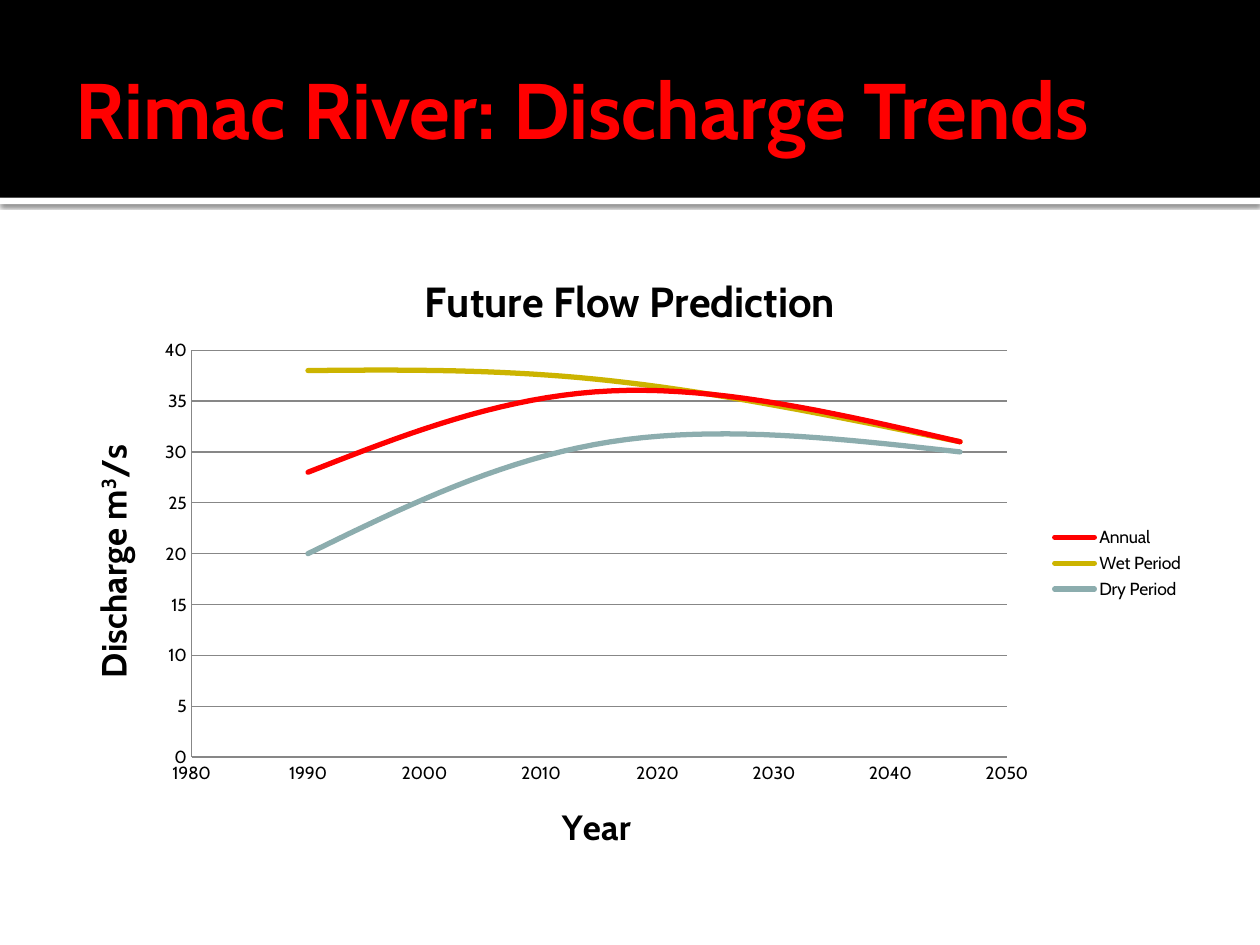
from lxml import etree
from pptx import Presentation
from pptx.chart.data import XyChartData
from pptx.dml.color import RGBColor
from pptx.enum.chart import XL_CHART_TYPE, XL_LEGEND_POSITION, XL_TICK_MARK
from pptx.enum.shapes import MSO_SHAPE
from pptx.enum.text import MSO_ANCHOR, PP_ALIGN
from pptx.oxml import parse_xml
from pptx.oxml.ns import nsdecls, qn
from pptx.util import Inches, Pt

SMOOTH = XL_CHART_TYPE.XY_SCATTER_SMOOTH_NO_MARKERS
RIGHT = XL_LEGEND_POSITION.RIGHT
NO_TICK = XL_TICK_MARK.NONE
RECT = MSO_SHAPE.RECTANGLE
MIDDLE = MSO_ANCHOR.MIDDLE
LEFT = PP_ALIGN.LEFT
FONT = "Cabin"
GRID = "878787"
YEARS = (1990, 2016, 2046)
SERIES = (
    ("Annual", (28, 36, 31), "FF0000"),
    ("Wet Period", (38, 37, 31), "CCB400"),
    ("Dry Period", (20, 31, 30), "8CADAE"),
)


def rgb(value):
    """Turn a hex string into a colour."""
    return RGBColor.from_string(value)


def add_text(p, text, size=10, color="000000", bold=False, baseline=None):
    """Add a formatted run to a paragraph."""
    r = p.add_run()
    r.text = text
    r.font.name, r.font.size, r.font.bold = FONT, Pt(size), bold
    r.font.color.rgb = rgb(color)
    if baseline:
        r.font._element.set("baseline", str(baseline))


def add_bar(s, box, color):
    """Add a plain rectangle without outline or shadow."""
    sp = s.shapes.add_shape(RECT, *map(Inches, box))
    sp.shadow.inherit = False
    sp.fill.solid()
    sp.fill.fore_color.rgb = rgb(color)
    sp.line.fill.background()
    return sp


def add_header(s, x, y, w, h):
    """Place the black band, its shadowed edge and the slide title."""
    edge = add_bar(s, (x, y + h, w, 0.05), "FFFFFF")
    effects = edge._element.spPr.find(qn("a:effectLst"))
    effects.append(parse_xml(
        f'<a:outerShdw {nsdecls("a")} blurRad="{Pt(2.5)}" dist="{Pt(0.8)}" dir="5400000">'
        '<a:srgbClr val="000000"><a:alpha val="60000"/></a:srgbClr></a:outerShdw>'))
    add_bar(s, (x, y, w, h), "000000")
    title = s.shapes.title
    s.shapes._spTree.append(title._element)
    title.left, title.top = Inches(x + 0.5), Inches(y + 0.17)
    title.width, title.height = Inches(w - 1), Inches(1.37)
    tf = title.text_frame
    tf.vertical_anchor = MIDDLE
    tf.margin_left = Inches(0.1)
    tf.margin_top = tf.margin_right = tf.margin_bottom = Inches(0.05)
    p = tf.paragraphs[0]
    p.alignment = LEFT
    add_text(p, "Rimac River: Discharge Trends", size=45, color="FF0000", bold=True)


def format_axis(axis, low, high, step):
    """Set an axis scale and line, and return its title paragraph."""
    axis.minimum_scale, axis.maximum_scale, axis.major_unit = low, high, step
    axis.major_tick_mark = axis.minor_tick_mark = NO_TICK
    axis.format.line.color.rgb = rgb(GRID)
    axis.format.line.width = Pt(0.75)
    axis.tick_labels.number_format = "General"
    axis.tick_labels.number_format_is_linked = False
    return axis.axis_title.text_frame.paragraphs[0]


def set_plot_box(chart, **box):
    """Fix the inner plot area, given as fractions of the chart."""
    area = chart._chartSpace.chart.plotArea
    for old in area.findall(qn("c:layout")):
        area.remove(old)
    layout = etree.Element(qn("c:layout"))
    manual = etree.SubElement(layout, qn("c:manualLayout"))
    settings = {"layoutTarget": "inner", "xMode": "edge", "yMode": "edge", **box}
    for tag, value in settings.items():
        etree.SubElement(manual, qn(f"c:{tag}")).set("val", str(value))
    area.insert(0, layout)


def add_flow_chart(s, x, y, w, h):
    """Place the smooth discharge chart."""
    data = XyChartData()
    for name, flows, _ in SERIES:
        series = data.add_series(name)
        for year, flow in zip(YEARS, flows):
            series.add_data_point(year, flow)
    chart = s.shapes.add_chart(SMOOTH, *map(Inches, (x, y, w, h)), data).chart
    chart.font.name, chart.font.size = FONT, Pt(10)
    chart.font.color.rgb = rgb("000000")
    chart.has_title = chart.has_legend = True
    add_text(chart.chart_title.text_frame.paragraphs[0], "Future Flow Prediction",
             size=24, bold=True)
    chart.legend.position = RIGHT
    chart.legend.include_in_layout = False

    years, flows = chart.category_axis, chart.value_axis
    years.has_major_gridlines = False
    add_text(format_axis(years, 1980, 2050, 10), "Year", size=20, bold=True)
    p = format_axis(flows, 0, 40, 5)
    add_text(p, "Discharge m", size=20, bold=True)
    add_text(p, "3", size=20, bold=True, baseline=30000)
    add_text(p, "/s", size=20, bold=True)
    flows.has_major_gridlines = True
    flows.major_gridlines.format.line.color.rgb = rgb(GRID)
    flows.major_gridlines.format.line.width = Pt(0.75)

    chart.plots[0].vary_by_categories = False
    for series, (_, _, color) in zip(chart.plots[0].series, SERIES):
        series.format.line.color.rgb = rgb(color)
        series.format.line.width = Pt(3)
        series._element.find(qn("c:smooth")).set("val", "1")
        series.format.line._get_or_add_ln().set("cap", "rnd")
    set_plot_box(chart, x=1.02 / w, y=0.84 / h, w=6.47 / w, h=3.23 / h)


def main():
    """Build and save the slide."""
    prs = Presentation()
    prs.slide_width, prs.slide_height = Inches(10), Inches(7.5)
    s = prs.slides.add_slide(prs.slide_layouts[5])
    add_header(s, 0, 0, 10, 1.57)
    add_flow_chart(s, 0.5, 1.94, 9, 5.06)
    prs.save("out.pptx")


if __name__ == "__main__":
    main()
